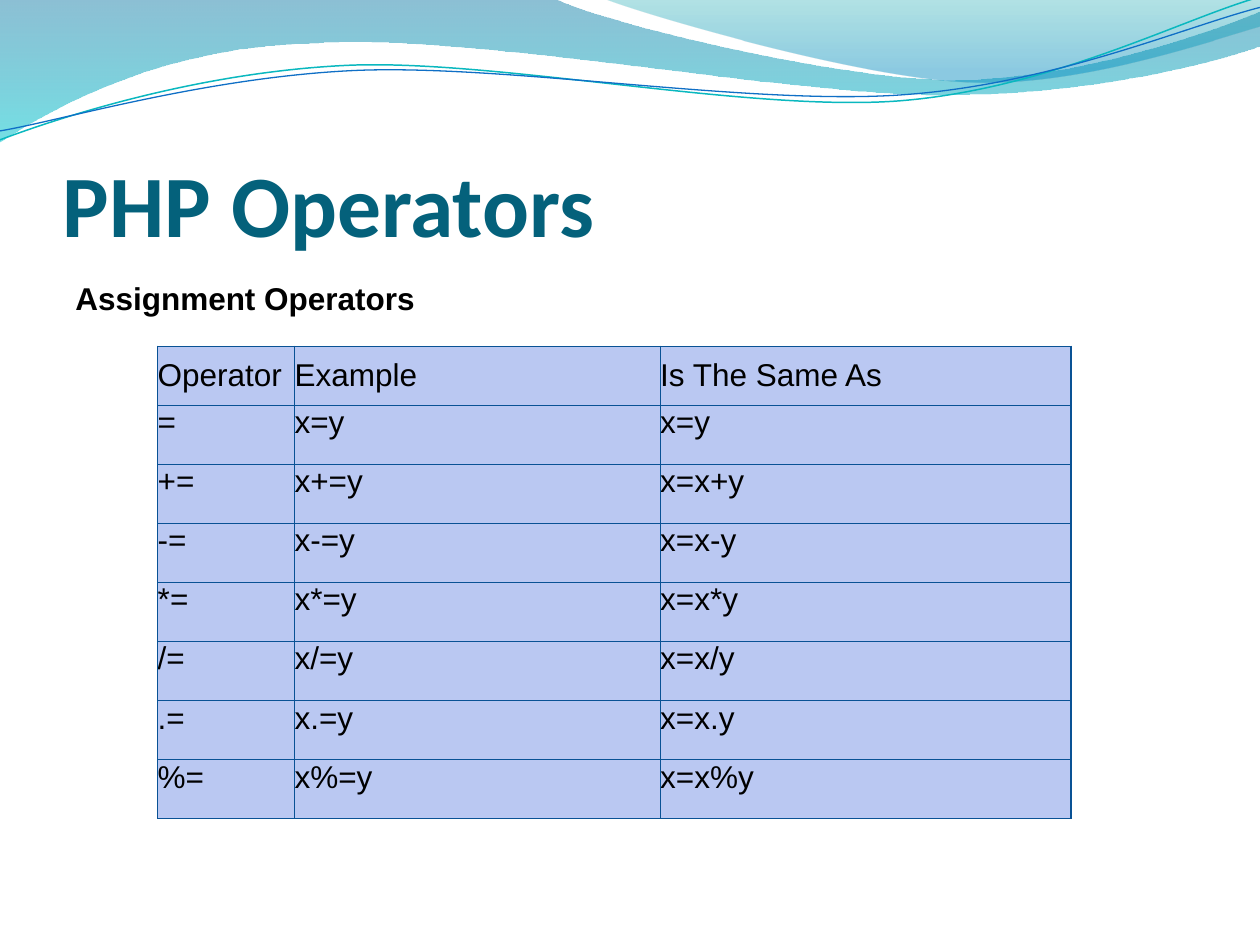
from lxml import etree
from pptx import Presentation
from pptx.dml.color import RGBColor
from pptx.enum.text import MSO_ANCHOR
from pptx.oxml.ns import qn
from pptx.util import Cm, Pt

TOP, MIDDLE, BOTTOM = MSO_ANCHOR.TOP, MSO_ANCHOR.MIDDLE, MSO_ANCHOR.BOTTOM

BLACK = RGBColor(0x00, 0x00, 0x00)
TITLE_TEAL = RGBColor(0x04, 0x61, 0x7B)
CELL_BLUE = RGBColor(0xBA, 0xC8, 0xF2)
BORDER_BLUE = RGBColor(0x09, 0x52, 0x95)
LINE_TEAL = RGBColor(0x0A, 0xB8, 0xBF)
LINE_BLUE = RGBColor(0x0F, 0x6F, 0xC6)
DEEP_BLUE = RGBColor(0x00, 0x74, 0xA1)
AQUA = RGBColor(0x00, 0xC6, 0xCF)
SEA_GREEN = RGBColor(0x00, 0xA1, 0xA9)
SKY_BLUE = RGBColor(0x00, 0x8B, 0xBF)

# Outlines in cm: a pair is a straight step, six numbers are a Bezier step
BACK_WAVE = [(0, 0), (11.18, -0.03),
             (12.09, 0.43, 16.87, 1.6, 19.25, 1.6),
             (21.67, 1.6, 24.33, 0.66, 25.4, 0.23), (25.43, 0.91),
             (24.97, 1.12, 22.1, 1.93, 18.95, 1.91),
             (15.8, 1.91, 9.7, 0.71, 6.53, 0.86),
             (3.28, 0.91, 1.17, 2.11, -0.03, 2.87)]
FRONT_WAVE = [(12.17, -0.03),
              (12.93, 0.28, 17.32, 1.57, 19.53, 1.65),
              (21.74, 1.75, 24.41, 0.81, 25.4, 0.53), (25.4, 0)]
TEAL_CURVE = [(-0.05, 2.22),
              (1.19, 1.82, 4.02, 1.04, 7.06, 1.05),
              (10.04, 1.07, 15.02, 2.37, 18.07, 2.29),
              (21.13, 2.2, 23.87, 0.91, 25.41, 0.55)]
BLUE_CURVE = [(-0.04, 2.04),
              (1.16, 1.9, 4.18, 1.15, 7.2, 1.16),
              (10.25, 1.18, 15.13, 2.25, 18.18, 2.17),
              (21.21, 2.1, 23.94, 1.06, 25.45, 0.75)]
CURVE_ANGLE = 357.3

COLUMN_WIDTHS = [2.76, 7.37, 8.28]
ROW_HEIGHT = 1.19
ROWS = [("Operator", "Example", "Is The Same As"), ("=", "x=y", "x=y")]
ROWS += [(f"{op}=", f"x{op}=y", f"x=x{op}y") for op in "+-*/.%"]


def write(tf, text, font="Arial", size=18, color=BLACK, bold=False):
    r = tf.paragraphs[0].add_run()
    r.text = text
    r.font.name, r.font.size, r.font.bold = font, Pt(size), bold
    r.font.color.rgb = color


class Deck:
    def __init__(self):
        self.prs = Presentation()
        self.prs.slide_width, self.prs.slide_height = Cm(25.4), Cm(19.05)
        self.s = self.prs.slides.add_slide(self.prs.slide_layouts[6])

    def outline(self, steps, close):
        points = [(Cm(x), Cm(y)) for step in steps
                  for x, y in zip(step[::2], step[1::2])]
        builder = self.s.shapes.build_freeform(*points[0])
        builder.add_line_segments(points[1:], close=close)
        sp = builder.convert_to_shape()
        sp.shadow.inherit = False
        # Join the three points of each Bezier step into one curve
        segments = iter(list(sp.element.iter(qn("a:lnTo"))))
        for step in steps[1:]:
            first = next(segments)
            if len(step) == 6:
                first.tag = qn("a:cubicBezTo")
                for _ in range(2):
                    segment = next(segments)
                    first.append(segment[0])
                    segment.getparent().remove(segment)
        return sp

    def wave(self, steps, stops):
        sp = self.outline(steps, close=True)
        sp.line.fill.background()
        sp.fill.gradient()
        sp.fill.gradient_angle = 270
        for stop, (position, color, _) in zip(sp.fill.gradient_stops, stops):
            stop.position = position
            stop.color.rgb = color
        colors = sp.element.spPr.iter(qn("a:srgbClr"))
        for clr, (_, _, opacity) in zip(colors, stops):
            etree.SubElement(clr, qn("a:alpha"), val=str(opacity * 1000))

    def curve(self, steps, color, width):
        sp = self.outline(steps, close=False)
        sp.rotation = CURVE_ANGLE
        sp.fill.background()
        sp.line.color.rgb, sp.line.width = color, Pt(width)

    def text(self, text, x, y, w, h, anchor, side=0.25, bottom=0.13, **style):
        tf = self.s.shapes.add_textbox(Cm(x), Cm(y), Cm(w), Cm(h)).text_frame
        tf.word_wrap = True
        tf.vertical_anchor = anchor
        tf.margin_left = tf.margin_right = Cm(side)
        tf.margin_bottom = Cm(bottom)
        write(tf, text, **style)

    def border(self, cell):
        pr = cell._tc.get_or_add_tcPr()
        for i, side in enumerate(("a:lnL", "a:lnR", "a:lnT", "a:lnB")):
            ln = etree.Element(qn(side), w=str(Pt(0.75)))
            fill = etree.SubElement(ln, qn("a:solidFill"))
            etree.SubElement(fill, qn("a:srgbClr"), val=str(BORDER_BLUE))
            pr.insert(i, ln)

    def table(self, rows, x, y, widths, row_height):
        table = self.s.shapes.add_table(len(rows), len(widths), Cm(x), Cm(y),
                                        Cm(sum(widths)), Cm(row_height * len(rows))).table
        for column, width in zip(table.columns, widths):
            column.width = Cm(width)
        for i, values in enumerate(rows):
            table.rows[i].height = Cm(row_height)
            for j, value in enumerate(values):
                cell = table.cell(i, j)
                cell.margin_left = cell.margin_right = 0
                cell.margin_top = cell.margin_bottom = 0
                cell.vertical_anchor = TOP if i else MIDDLE
                cell.fill.solid()
                cell.fill.fore_color.rgb = CELL_BLUE
                self.border(cell)
                write(cell.text_frame, value)


def main():
    deck = Deck()

    # Waves along the top
    deck.wave(BACK_WAVE, [(0, DEEP_BLUE, 45), (1, AQUA, 55)])
    deck.wave(FRONT_WAVE, [(0, SEA_GREEN, 30), (0.8, SKY_BLUE, 45)])
    deck.curve(TEAL_CURVE, LINE_TEAL, 0.85)
    deck.curve(BLUE_CURVE, LINE_BLUE, 0.75)

    # Headings
    deck.text("PHP Operators", 1.27, 1.96, 22.86, 3.18, BOTTOM, side=0, bottom=0,
              font="Calibri", size=50, color=TITLE_TEAL, bold=True)
    deck.text("Assignment Operators", 1.27, 5.5, 8.46, 1.02, MIDDLE, bold=True)

    # Operator table
    deck.table(ROWS, 3.18, 6.98, COLUMN_WIDTHS, ROW_HEIGHT)

    deck.prs.save("out.pptx")


if __name__ == "__main__":
    main()
